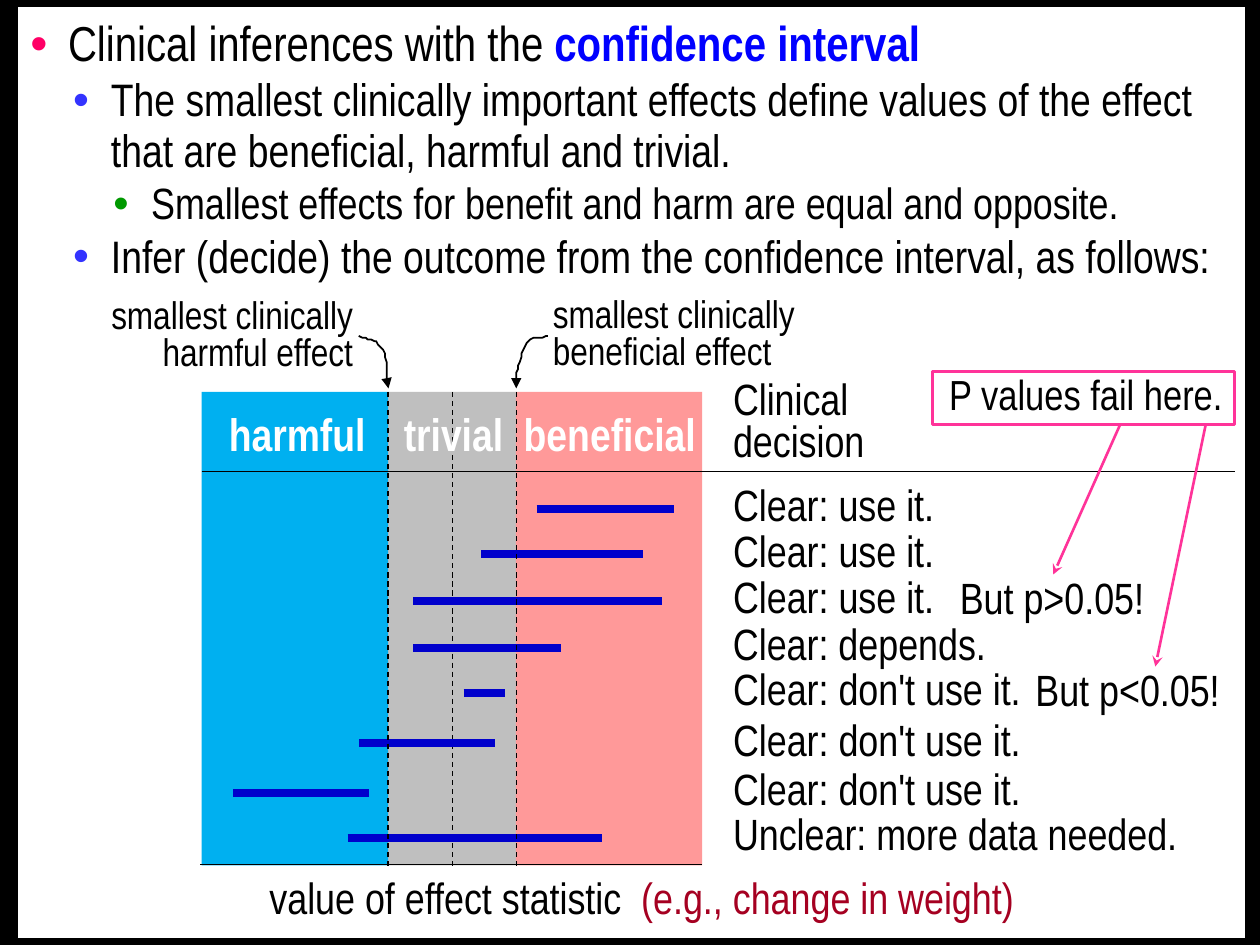
from typing import Any, NamedTuple

from lxml.etree import SubElement
from pptx import Presentation
from pptx.dml.color import RGBColor
from pptx.enum.dml import MSO_LINE
from pptx.enum.shapes import MSO_CONNECTOR, MSO_SHAPE
from pptx.enum.text import MSO_ANCHOR, MSO_AUTO_SIZE, PP_ALIGN
from pptx.oxml import parse_xml
from pptx.oxml.ns import nsdecls, qn
from pptx.util import Pt

FACE = "Arial Narrow"
HUES = {
    "black": "000000", "white": "FFFFFF", "blue": "0000FF", "bar": "0000CC",
    "harm": "00B0F0", "grey": "BFBFBF", "good": "FF9999", "pink": "FF3399",
    "wine": "A50021", "dot0": "FF0066", "dot1": "3333FF", "dot2": "009900",
}
TOP, FOOT = 223.9, 494.6
LEFT = 411.8  # left edge of the decision column


class Item(NamedTuple):
    level: int
    size: float
    text: str
    strong: str = ""


class Zone(NamedTuple):
    name: str
    hue: str
    left: float
    right: float
    word: tuple[float, float]  # left and width of the heading


class Row(NamedTuple):
    y: float
    start: float
    end: float
    text: str
    width: float


class Note(NamedTuple):
    text: str
    box: tuple[float, float, float, float]
    size: float = 25
    align: Any = PP_ALIGN.LEFT
    anchor: Any = MSO_ANCHOR.MIDDLE


class Hook(NamedTuple):
    """A chain of cubic curves: the first point, then three per curve."""
    points: list[tuple[float, float]]


ITEMS = [
    Item(0, 28, "Clinical inferences with the ", "confidence interval"),
    Item(1, 26, "The smallest clinically important effects define values of "
                "the effect that are beneficial, harmful and trivial."),
    Item(2, 25, "Smallest effects for benefit and harm are equal and opposite."),
    Item(1, 26, "Infer (decide) the outcome from the confidence interval, as follows:"),
]
INDENT = [21.6, 46.1, 69.1]
ZONES = [
    Zone("trivial", "grey", 221.8, 295, (229, 60.5)),
    Zone("harmful", "harm", 115.2, 221.8, (128.9, 82.1)),
    Zone("beneficial", "good", 294.8, 401.2, (297.4, 102.2)),
]
ROWS = [
    Row(290.9, 306.7, 385.2, "Clear: use it.", 131),
    Row(316.8, 275, 367.2, "Clear: use it.", 131),
    Row(343.4, 236.2, 378, "Clear: use it.", 131),
    Row(370.1, 236.2, 320.4, "Clear: depends.", 160.6),
    Row(396, 265, 288.7, "Clear: don't use it.", 180.7),
    Row(424.8, 205.2, 283, "Clear: don't use it.", 180.7),
    Row(452.9, 133.2, 211, "Clear: don't use it.", 180.7),
    Row(478.8, 198.7, 344.2, "Unclear: more data needed.", 277.2),
]
NOTES = [
    Note("Clinical\ndecision", (LEFT, 214.6, 90, 55.4), anchor=MSO_ANCHOR.BOTTOM),
    Note("smallest clinically\nharmful effect", (54.7, 167.8, 154.1, 49.7),
         22, PP_ALIGN.RIGHT),
    Note("smallest clinically\nbeneficial effect", (308.9, 167, 154.1, 49.7), 22),
    Note("But p>0.05!", (541.4, 328.3, 121, 31.7)),
]
HOOKS = [
    Hook([(221.8, 222.5), (221.8, 221.8), (221.8, 220.3), (221, 216),
          (220.3, 211.7), (221.8, 201.6), (217.4, 198),
          (215.3, 193.7), (209.5, 193.7), (205.2, 192.2)]),
    Hook([(295.2, 222.5), (295.2, 221), (294.5, 217.4), (295.2, 213.1),
          (296.6, 208.1), (298.1, 200.2), (301, 195.8),
          (303.8, 192.2), (308.9, 193), (313.2, 192.2)]),
]


def put(thing: Any, **vals: Any) -> None:
    for name, val in vals.items():
        setattr(thing, name, val)


def rgb(hue: str) -> RGBColor:
    return RGBColor.from_string(HUES[hue])


def ink(font: Any, size: float, hue: str = "black", bold: bool = False) -> None:
    put(font, name=FACE, size=Pt(size), bold=bold)
    font.color.rgb = rgb(hue)


def edge(line: Any, hue: str, width: float) -> None:
    line.color.rgb = rgb(hue)
    line.width = Pt(width)


def tip(shape: Any, end: str, kind: str) -> None:
    """Put an arrowhead at headEnd or tailEnd."""
    SubElement(shape.line._get_or_add_ln(), qn(f"a:{end}"), type=kind)


def link(shapes: Any, x1: float, y1: float, x2: float, y2: float,
         hue: str = "black", width: float = 0.75, dash: bool = False) -> Any:
    wire = shapes.add_connector(MSO_CONNECTOR.STRAIGHT, Pt(x1), Pt(y1), Pt(x2), Pt(y2))
    edge(wire.line, hue, width)
    if dash:
        wire.line.dash_style = MSO_LINE.DASH
    SubElement(wire._element.spPr, qn("a:effectLst"))
    return wire


def block(shapes: Any, box: tuple, hue: str = "") -> Any:
    rect = shapes.add_shape(MSO_SHAPE.RECTANGLE, *map(Pt, box))
    rect.shadow.inherit = False
    rect.line.fill.background()
    if hue:
        rect.fill.solid()
        rect.fill.fore_color.rgb = rgb(hue)
    else:
        rect.fill.background()
    return rect


def write(shape: Any, note: Note, hue: str = "black", bold: bool = False,
          wrap: bool = False) -> Any:
    frame = shape.text_frame
    put(frame, word_wrap=wrap, auto_size=MSO_AUTO_SIZE.SHAPE_TO_FIT_TEXT,
        vertical_anchor=note.anchor)
    para = frame.paragraphs[0]
    put(para, text=note.text, alignment=note.align, line_spacing=0.8)
    for run in para.runs:
        ink(run.font, note.size, hue, bold)
    return para


def label(shapes: Any, note: Note) -> Any:
    return write(shapes.add_textbox(*map(Pt, note.box)), note)


def outline(slide: Any) -> None:
    slide.shapes.title._element.getparent().remove(slide.shapes.title._element)
    body = slide.placeholders[1]
    put(body, left=Pt(10.1), top=Pt(3.6), width=Pt(702), height=Pt(532.8))
    body.fill.solid()
    body.fill.fore_color.rgb = rgb("white")
    edge(body.line, "black", 0.75)
    frame = body.text_frame
    put(frame, auto_size=MSO_AUTO_SIZE.NONE, vertical_anchor=MSO_ANCHOR.TOP,
        margin_left=Pt(7.2), margin_top=Pt(6.5), margin_right=Pt(7.2), margin_bottom=Pt(3.6))
    for i, item in enumerate(ITEMS):
        para = frame.add_paragraph() if i else frame.paragraphs[0]
        put(para, level=item.level, line_spacing=0.94, space_before=Pt(1.4))
        props = para._p.get_or_add_pPr()
        put_in = {"marL": INDENT[item.level], "indent": -21.6}
        for key, val in put_in.items():
            props.set(key, str(int(Pt(val))))
        tint = SubElement(props, qn("a:buClr"))
        SubElement(tint, qn("a:srgbClr"), val=HUES[f"dot{item.level}"])
        SubElement(props, qn("a:buChar"), char="•")
        for text, hue in ((item.text, "black"), (item.strong, "blue")):
            if text:
                run = para.add_run()
                run.text = text
                ink(run.font, item.size, hue, hue == "blue")


def heading(shapes: Any, zone: Zone) -> None:
    x, wide = zone.word
    box = shapes.add_textbox(Pt(x), Pt(238.3), Pt(wide), Pt(25.2))
    put(box.text_frame, margin_left=Pt(1.4), margin_right=Pt(1.4), margin_top=0, margin_bottom=0)
    note = Note(zone.name, (), 26, PP_ALIGN.CENTER, MSO_ANCHOR.TOP)
    para = write(box, note, "white", True)
    shade = parse_xml(
        f'<a:effectLst {nsdecls("a")}><a:outerShdw dist="25400" dir="2700000">'
        f'<a:srgbClr val="{HUES["black"]}"/></a:outerShdw></a:effectLst>')
    para.runs[0].font._element.find(qn("a:solidFill")).addnext(shade)


def curve(shapes: Any, hook: Hook, steps: int = 8) -> None:
    pts = hook.points
    trail = []
    for i in range(0, len(pts) - 1, 3):
        for k in range(1, steps + 1):
            t = k / steps
            mix = ((1 - t) ** 3, 3 * t * (1 - t) ** 2, 3 * t * t * (1 - t), t ** 3)
            trail.append(tuple(sum(m * p[axis] for m, p in zip(mix, pts[i:i + 4]))
                               for axis in (0, 1)))
    pen = shapes.build_freeform(*pts[0], scale=Pt(1))
    pen.add_line_segments(trail, close=False)
    arc = pen.convert_to_shape()
    arc.shadow.inherit = False
    arc.fill.background()
    edge(arc.line, "black", 1)
    tip(arc, "headEnd", "triangle")


def main() -> None:
    deck = Presentation()
    put(deck, slide_width=Pt(720), slide_height=Pt(540))
    slide = deck.slides.add_slide(deck.slide_layouts[1])
    slide.background.fill.solid()
    slide.background.fill.fore_color.rgb = rgb("black")
    shapes = slide.shapes
    outline(slide)

    for zone in ZONES:
        block(shapes, (zone.left, TOP, zone.right - zone.left, FOOT - TOP), zone.hue)
        if zone.name == "trivial":
            link(shapes, 258.5, TOP, 258.5, FOOT, dash=True)
        heading(shapes, zone)
    axis = label(shapes, Note("value of effect statistic", (146.9, 499.7, 445, 31.7),
                              anchor=MSO_ANCHOR.TOP))
    extra = axis.add_run()
    extra.text = "  (e.g., change in weight)"
    ink(extra.font, 25, "wine")
    link(shapes, 114.5, 493.9, 401, 493.9)
    link(shapes, 115.2, 269.3, 705.6, 269.3)

    for row in ROWS:
        link(shapes, row.start, row.y, row.end, row.y, "bar", 4.5)
        label(shapes, Note(row.text, (LEFT, row.y - 15.8, row.width, 31.7)))
    for x in (221.8, 295.2):
        link(shapes, x, TOP, x, FOOT, dash=True)
    for note in NOTES:
        label(shapes, note)
    for hook in HOOKS:
        curve(shapes, hook)

    fail = Note("P values fail here.", (532.8, 212.4, 172.8, 30.2), 24, PP_ALIGN.RIGHT)
    frame = block(shapes, fail.box)
    edge(frame.line, "pink", 1.5)
    write(frame, fail, wrap=True)
    for x1, x2, y2 in ((640.1, 601.9, 328.3), (689, 660.2, 380.9)):
        tip(link(shapes, x1, 242.6, x2, y2, "pink", 1.5), "tailEnd", "stealth")
    less = Note("But p<0.05!", (584.6, 380.9, 121, 31.7))
    veil = block(shapes, less.box, "white")
    SubElement(veil._element.spPr.find(qn("a:solidFill"))[0], qn("a:alpha"), val="50000")
    write(veil, less)
    deck.save("out.pptx")


if __name__ == "__main__":
    main()
